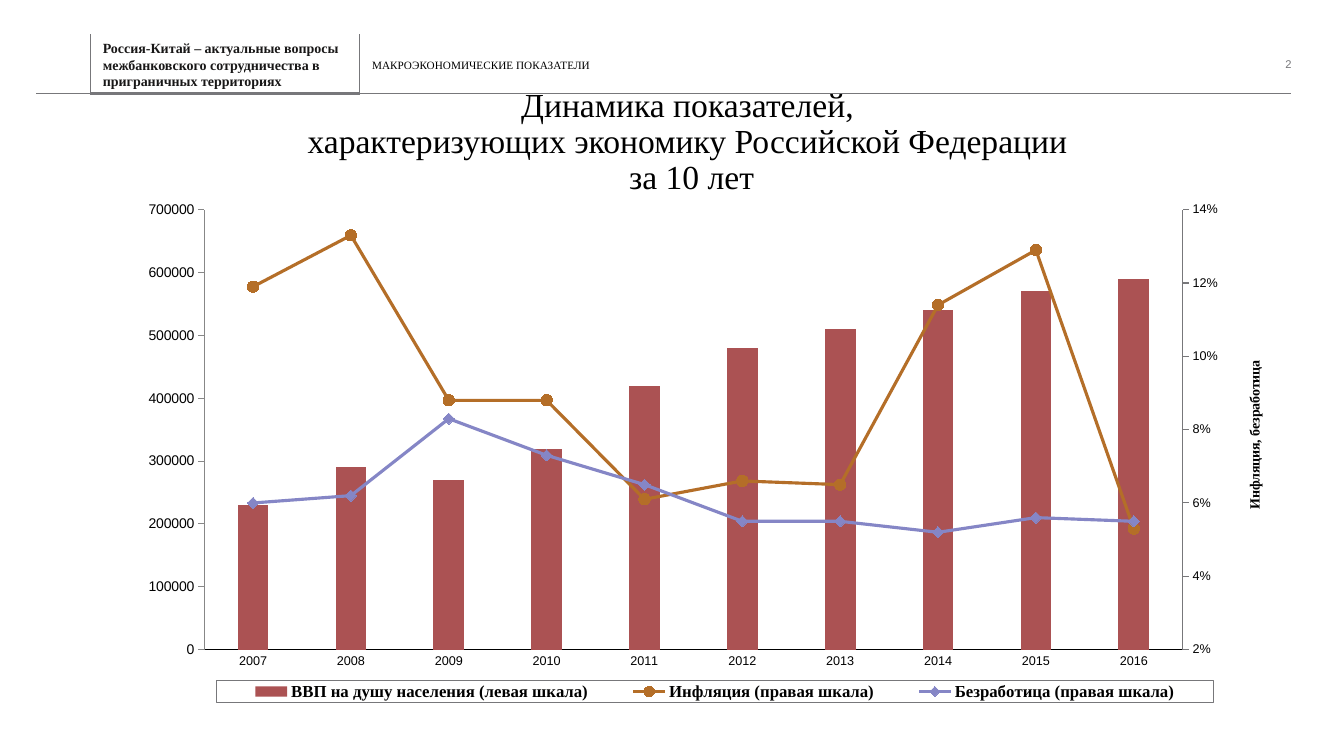
from copy import deepcopy
from lxml import etree
from pptx import Presentation, util as u
from pptx.chart import axis as ax
from pptx.chart.data import CategoryChartData
from pptx.dml.color import RGBColor
from pptx.enum import chart as ec, shapes, text
from pptx.oxml import parse_xml
from pptx.oxml.ns import nsdecls, qn

SERIF, SANS = "Times New Roman", "Arial"
THEME = {
    "ink": "000000", "header": "181717", "rule": "77777A", "grid": "EDEDEE",
    "series": ["AB5253", "B46E28", "8586C6"],
    "title": 24, "legend": 12, "body": 10, "axis": 9, "small": 8,
}
RULES = [
    ((0.89, 0.92), (0.36, 0.92), 0.25),
    ((3.57, 0.93), (0.89, 0.93), 2.25),
    ((12.8, 0.92), (3.55, 0.92), 0.25),
    ((0.89, 0.93), (0.89, 0.34), 0.25),
    ((3.56, 0.93), (3.56, 0.34), 0.25),
]
TEXTS = [
    ("Россия-Китай – актуальные вопросы межбанковского сотрудничества в приграничных территориях",
     (1.02, 0.39, 2.49, 0.5), "LEFT", 1, ("body", SERIF, "header", True)),
    ("Динамика показателей, \nхарактеризующих экономику Российской Федерации \nза 10 лет",
     (0.92, 0.93, 11.88, 0.97), "CENTER", 0.9, ("title", SERIF, "ink", False)),
    ("МАКРОЭКОНОМИЧЕСКИЕ ПОКАЗАТЕЛИ",
     (3.69, 0.37, 3.9, 0.57), "LEFT", 0.9, ("small", SERIF, "ink", False)),
    ("2", (12.28, 0.38, 0.53, 0.51), "RIGHT", 1, ("small", SANS, "rule", False)),
]
YEARS = [str(year) for year in range(2007, 2017)]
SERIES = [
    ("ВВП на душу населения (левая шкала)", "0",
     [230000, 290000, 270000, 320000, 420000, 480000, 510000, 540000, 570000, 590000]),
    ("Инфляция (правая шкала)", "0%",
     [0.119, 0.133, 0.088, 0.088, 0.061, 0.066, 0.065, 0.114, 0.129, 0.053]),
    ("Безработица (правая шкала)", "0%",
     [0.06, 0.062, 0.083, 0.073, 0.065, 0.055, 0.055, 0.052, 0.056, 0.055]),
]
SCALES = [
    ("ВВП на душу населения, рублей", "0", 100000, 700000, 100000, "NONE", (0.02, 0.28)),
    ("Инфляция, безработица", "0%", 0.02, 0.14, 0.02, "OUTSIDE", (0.96, 0.32)),
]
CHART_BOX = (0.92, 1.9, 11.88, 5.16)
PLOT_BOX = (0.093, 0.035, 0.817, 0.846)
LEGEND_BOX = (0.103, 0.94, 0.833, 0.043)


def rgb(name):
    return RGBColor.from_string(THEME.get(name, name))


def style(font, size, face, color, bold=False):
    values = {"size": u.Pt(THEME[size]), "name": face, "bold": bold}
    for key, value in values.items():
        setattr(font, key, value)
    font.color.rgb = rgb(color)


def stroke(line, color, width):
    line.color.rgb = rgb(color)
    line.width = u.Pt(width)


def place(parent, box, after=None, inner=False):
    for old in parent.findall(qn("c:layout")):
        parent.remove(old)
    tags = '<c:layoutTarget val="inner"/>' if inner else ""
    tags += '<c:xMode val="edge"/><c:yMode val="edge"/>'
    tags += "".join(f'<c:{k} val="{v}"/>' for k, v in zip("xywh", box))
    layout = parse_xml(f'<c:layout {nsdecls("c")}><c:manualLayout>{tags}</c:manualLayout></c:layout>')
    if after is None:
        parent.insert(0, layout)
    else:
        parent.find(qn(after)).addnext(layout)


def add_rule(s, start, end, width):
    points = [u.Inches(v) for v in start + end]
    line = s.shapes.add_connector(shapes.MSO_CONNECTOR.STRAIGHT, *points)
    stroke(line.line, "rule", width)
    etree.SubElement(line._element.spPr, qn("a:effectLst"))


def add_text(s, words, box, align, spacing, font):
    tf = s.shapes.add_textbox(*map(u.Inches, box)).text_frame
    frame = {"word_wrap": True, "vertical_anchor": text.MSO_ANCHOR.MIDDLE,
             "margin_left": 0, "margin_right": 0, "margin_top": 0, "margin_bottom": 0}
    for key, value in frame.items():
        setattr(tf, key, value)
    p = tf.paragraphs[0]
    p.text = words
    p.alignment = getattr(text.PP_ALIGN, align)
    p.line_spacing = spacing
    for r in p.runs:
        style(r.font, *font)


def add_right_scale(chart):
    area = chart._chartSpace.chart.plotArea
    bars, cat, val = (area.find(qn(t)) for t in ("c:barChart", "c:catAx", "c:valAx"))
    lines = parse_xml(
        f'<c:lineChart {nsdecls("c")}><c:grouping val="standard"/><c:varyColors val="0"/>'
        '<c:marker val="1"/><c:axId val="5001"/><c:axId val="5002"/></c:lineChart>')
    line_marker = lines.find(qn("c:marker"))
    for ser in bars.findall(qn("c:ser"))[1:]:
        for flag in ser.findall(qn("c:invertIfNegative")):
            ser.remove(flag)
        line_marker.addprevious(ser)
    bars.addnext(lines)
    cat2, val2 = deepcopy(cat), deepcopy(val)
    for node, own, other in ((cat2, "5001", "5002"), (val2, "5002", "5001")):
        node.find(qn("c:axId")).set("val", own)
        node.find(qn("c:crossAx")).set("val", other)
    cat2.find(qn("c:delete")).set("val", "1")
    val2.find(qn("c:axPos")).set("val", "r")
    val2.find(qn("c:crosses")).set("val", "max")
    val.addnext(val2)
    val2.addnext(cat2)
    return ax.ValueAxis(val2)


def format_axis(axis, tick):
    axis.major_tick_mark = getattr(ec.XL_TICK_MARK, tick)
    axis.minor_tick_mark = ec.XL_TICK_MARK.NONE
    style(axis.tick_labels.font, "axis", SANS, "ink")


def format_scale(axis, title, fmt, low, high, step, tick, corner):
    limits = {"minimum_scale": low, "maximum_scale": high, "major_unit": step}
    for key, value in limits.items():
        setattr(axis, key, value)
    format_axis(axis, tick)
    stroke(axis.format.line, "rule", 0.75)
    axis.tick_labels.number_format = fmt
    axis.tick_labels.number_format_is_linked = False
    tf = axis.axis_title.text_frame
    tf.text = title
    body = tf._txBody.find(qn("a:bodyPr"))
    body.set("rot", "-5400000")
    body.set("vert", "horz")
    style(tf.paragraphs[0].runs[0].font, "body", SERIF, "ink", True)
    place(axis.axis_title._element, corner, "c:tx")


def add_economy_chart(s):
    data = CategoryChartData()
    data.categories = YEARS
    for name, fmt, values in SERIES:
        data.add_series(name, values, fmt)
    box = map(u.Inches, CHART_BOX)
    chart = s.shapes.add_chart(ec.XL_CHART_TYPE.COLUMN_CLUSTERED, *box, data).chart
    chart.has_title = False
    style(chart.font, "body", SANS, "ink")
    chart.value_axis.has_major_gridlines = False
    right = add_right_scale(chart)
    left = chart.value_axis
    left.has_major_gridlines = True
    stroke(left.major_gridlines.format.line, "grid", 0.75)
    for axis, scale in zip((left, right), SCALES):
        format_scale(axis, *scale)
    format_axis(chart.category_axis, "NONE")
    stroke(chart.category_axis.format.line, "ink", 0.75)

    bars, lines = chart.plots
    bars.gap_width, bars.overlap, bars.vary_by_categories = 219, -27, False
    fill = bars.series[0].format.fill
    fill.solid()
    fill.fore_color.rgb = rgb(THEME["series"][0])
    markers = (ec.XL_MARKER_STYLE.CIRCLE, ec.XL_MARKER_STYLE.DIAMOND)
    for ser, color, marker in zip(lines.series, THEME["series"][1:], markers):
        ser.smooth = False
        stroke(ser.format.line, color, 2.25)
        ser.marker.style, ser.marker.size = marker, 8
        ser.marker.format.fill.solid()
        ser.marker.format.fill.fore_color.rgb = rgb(color)
        stroke(ser.marker.format.line, color, 0.75)

    chart.has_legend = True
    legend = chart.legend
    legend.position = ec.XL_LEGEND_POSITION.BOTTOM
    legend.include_in_layout = False
    style(legend.font, "legend", SERIF, "ink", True)
    place(legend._element, LEGEND_BOX, "c:legendPos")
    border = parse_xml(
        f'<c:spPr {nsdecls("c", "a")}><a:ln w="9525"><a:solidFill>'
        f'<a:srgbClr val="{THEME["rule"]}"/></a:solidFill></a:ln></c:spPr>')
    legend._element.find(qn("c:txPr")).addprevious(border)
    place(chart._chartSpace.chart.plotArea, PLOT_BOX, inner=True)


def main():
    prs = Presentation()
    prs.slide_width, prs.slide_height = u.Inches(13.33), u.Inches(7.5)
    s = prs.slides.add_slide(prs.slide_layouts[6])
    for rule in RULES:
        add_rule(s, *rule)
    for item in TEXTS:
        add_text(s, *item)
    add_economy_chart(s)
    prs.save("out.pptx")


if __name__ == "__main__":
    main()
